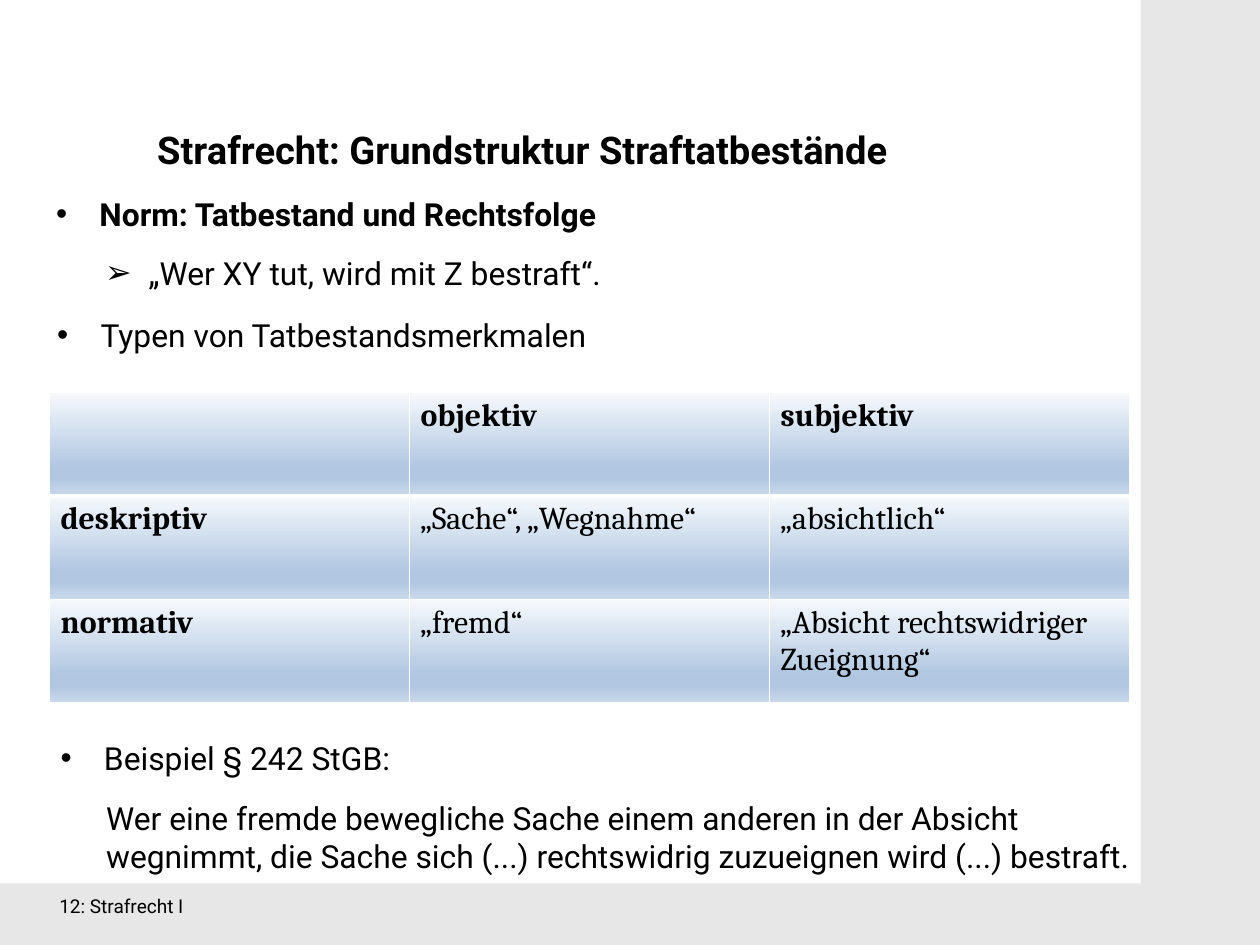
from lxml import etree
from pptx import Presentation
from pptx.dml import color
from pptx.enum import shapes, text
from pptx.oxml import ns
from pptx.util import Inches, Pt


def paint(fill, tint):
    fill.solid()
    fill.fore_color.rgb = color.RGBColor.from_string(tint)


def write(frame, words, **look):
    para = frame.paragraphs[0]
    para.space_before, para.line_spacing = Pt(0), 1
    run = para.add_run()
    run.text = words
    base = {"name": "Roboto", "size": Pt(20), "bold": False}
    for key, value in {**base, **look}.items():
        setattr(run.font, key, value)
    paint(run.font.fill, "000000")
    return para


deck = Presentation()
deck.slide_width, deck.slide_height = Inches(28 / 2.54), Inches(21 / 2.54)
slide = deck.slides.add_slide(deck.slide_layouts[4])
paint(slide.background.fill, "E7E7E7")

panel = slide.shapes.add_shape(
    shapes.MSO_SHAPE.RECTANGLE, 0, 0, Inches(9.98), Inches(7.73))
panel.shadow.inherit = False
paint(panel.fill, "FFFFFF")
panel.line.fill.background()
panel.element.getparent().insert(2, panel.element)

title, *lists = slide.placeholders
notes = [slide.shapes.add_textbox(0, 0, 0, 0) for _ in range(2)]
left, center = text.PP_ALIGN.LEFT, text.PP_ALIGN.CENTER
plan = [
    (title, (0.24, 1.06, 8.66, 0.51), "Strafrecht: Grundstruktur Straftatbestände",
     "", center, {"size": Pt(24), "bold": True}),
    (lists[0], (0.39, 1.65, 9.77, 0.44), "Norm: Tatbestand und Rechtsfolge",
     "•", left, {"bold": True}),
    (lists[1], (0.82, 2.17, 10.17, 0.44), "„Wer XY tut, wird mit Z bestraft“.",
     "➢", left, {}),
    (lists[2], (0.4, 2.71, 9.71, 0.44), "Typen von Tatbestandsmerkmalen",
     "•", left, {}),
    (lists[3], (0.43, 6.41, 8.66, 0.44), "Beispiel § 242 StGB:", "•", left, {}),
    (notes[0], (0.83, 6.94, 9.28, 0.77),
     "Wer eine fremde bewegliche Sache einem anderen in der Absicht wegnimmt, "
     "die Sache sich (...) rechtswidrig zuzueignen wird (...) bestraft.",
     "", left, {}),
    (notes[1], (0.42, 7.78, 4.19, 0.3), "12: Strafrecht I",
     "", left, {"size": Pt(12)}),
]
frame_look = {
    "word_wrap": True,
    "auto_size": text.MSO_AUTO_SIZE.SHAPE_TO_FIT_TEXT,
    "vertical_anchor": text.MSO_ANCHOR.TOP,
}
for box, spot, words, mark, align, look in plan:
    for key, value in zip(("left", "top", "width", "height"), spot):
        setattr(box, key, Inches(value))
    for key, value in frame_look.items():
        setattr(box.text_frame, key, value)
    para = write(box.text_frame, words, **look)
    para.alignment = align
    if mark:
        props = para._p.get_or_add_pPr()
        props.set("marL", str(Inches(0.38)))
        props.set("indent", str(Inches(-0.38)))
        etree.SubElement(props, ns.qn("a:buFont")).set("typeface", "Arial")
        etree.SubElement(props, ns.qn("a:buChar")).set("char", mark)

rows = [
    ["", "objektiv", "subjektiv"],
    ["deskriptiv", "„Sache“, „Wegnahme“", "„absichtlich“"],
    ["normativ", "„fremd“", "„Absicht rechtswidriger Zueignung“"],
]
stops = [(0, "F6F9FC"), (74, "B0C6E1"), (83, "B0C6E1"), (100, "CAD9EB")]
grid = slide.shapes.add_table(
    3, 3, Inches(0.43), Inches(3.43), Inches(9.45), Inches(2.72)).table
grid.first_row = grid.horz_banding = False
for r, row in enumerate(rows):
    for c, words in enumerate(row):
        cell = grid.cell(r, c)
        if words:
            write(cell.text_frame, words, name="Cambria", bold=r == 0 or c == 0)
        props = cell._tc.get_or_add_tcPr()
        for side in "LRTB":
            thick = (r, side) in ((0, "B"), (1, "T"))
            edge = etree.SubElement(
                props, ns.qn("a:ln" + side), w=str(Pt(3 if thick else 1)))
            solid = etree.SubElement(edge, ns.qn("a:solidFill"))
            etree.SubElement(solid, ns.qn("a:srgbClr"), val="FFFFFF")
        blend = etree.SubElement(props, ns.qn("a:gradFill"), rotWithShape="1")
        ramp = etree.SubElement(blend, ns.qn("a:gsLst"))
        for place, tint in stops:
            stop = etree.SubElement(ramp, ns.qn("a:gs"), pos=str(place * 1000))
            etree.SubElement(stop, ns.qn("a:srgbClr"), val=tint)
        etree.SubElement(blend, ns.qn("a:lin"), ang="5400000", scaled="0")

deck.save("out.pptx")
